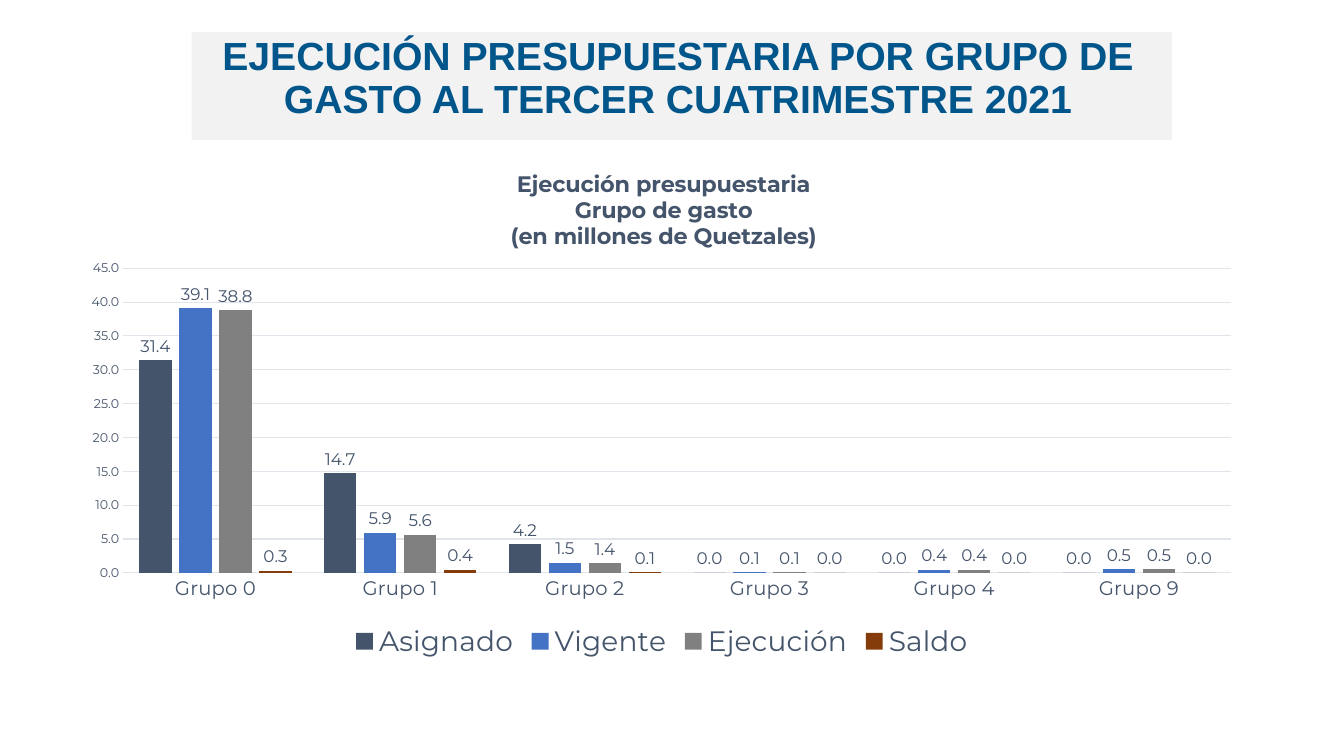
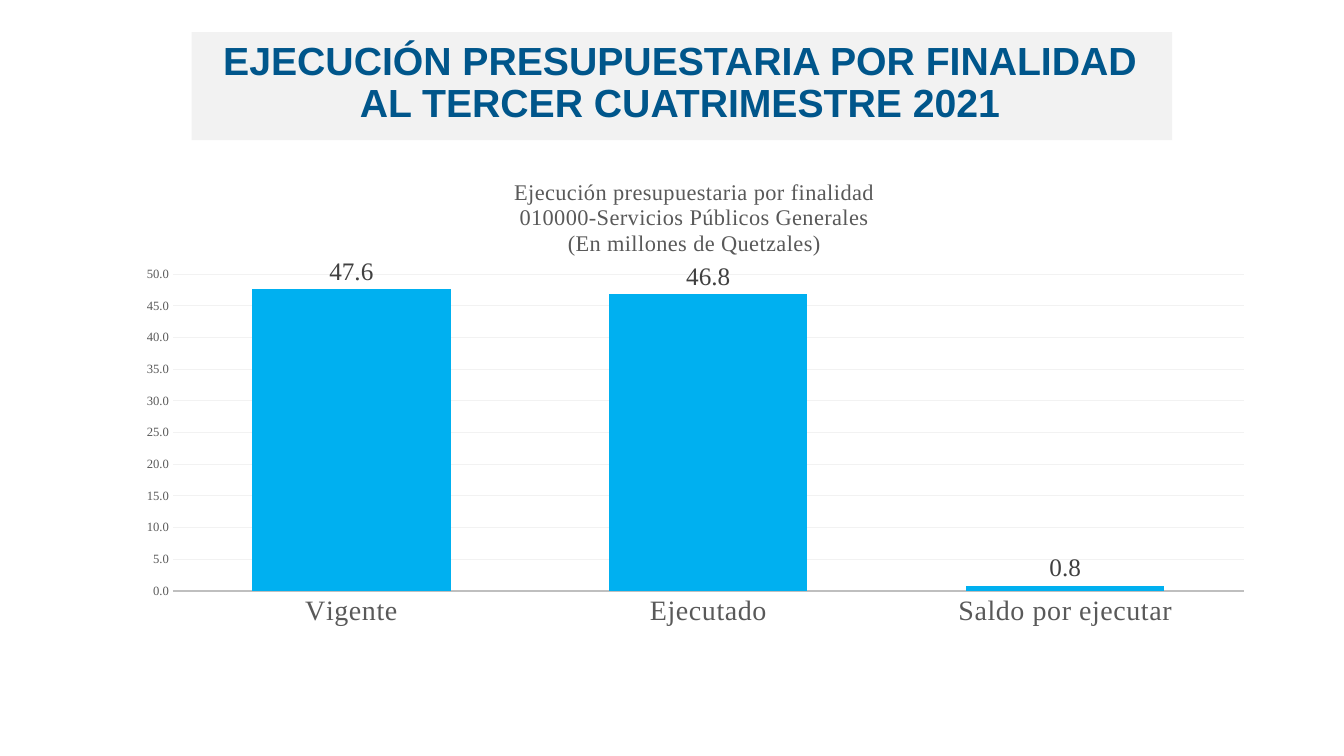
"""Builds two slides on budget execution, each with a title band and a column chart."""
from dataclasses import dataclass

from pptx import Presentation
from pptx.chart.data import CategoryChartData
from pptx.dml.color import RGBColor
from pptx.enum.chart import XL_CHART_TYPE, XL_LABEL_POSITION, XL_LEGEND_POSITION, XL_TICK_MARK
from pptx.enum.shapes import MSO_SHAPE
from pptx.enum.text import MSO_ANCHOR, PP_ALIGN
from pptx.oxml import parse_xml
from pptx.oxml.ns import nsdecls, qn
from pptx.util import Cm, Pt

BAND = RGBColor(0xF2, 0xF2, 0xF2)
TITLE = RGBColor(0x00, 0x56, 0x8B)
SLATE = RGBColor(0x44, 0x54, 0x6A)
BLUE = RGBColor(0x44, 0x72, 0xC4)
GRAY = RGBColor(0x80, 0x80, 0x80)
BROWN = RGBColor(0x84, 0x3C, 0x0B)
SKY = RGBColor(0x00, 0xB0, 0xF0)
MIST = RGBColor(0xE0, 0xE5, 0xEB)
SILVER = RGBColor(0xBF, 0xBF, 0xBF)
DIM = RGBColor(0x59, 0x59, 0x59)
DARK = RGBColor(0x40, 0x40, 0x40)
NUMBER_FORMAT = "0.0"


@dataclass(frozen=True)
class Series:
    name: str
    values: tuple[float, ...]
    color: RGBColor


@dataclass(frozen=True)
class Style:
    font: str
    text: RGBColor
    label: RGBColor
    grid: RGBColor
    axis: RGBColor
    axis_width: float
    title_size: float
    title_bold: bool
    category_size: float
    label_size: float
    title_spacing: int = 0
    axis_spacing: int = 0


@dataclass(frozen=True)
class ChartSlide:
    title: str
    title_left: float
    title_top: float
    box: tuple[float, float, float, float]
    heading: tuple[str, ...]
    heading_at: tuple[float, float]
    plot_at: tuple[float, float, float, float]
    categories: tuple[str, ...]
    series: tuple[Series, ...]
    style: Style
    maximum: float
    gap: int
    overlap: int
    legend: bool


MONTSERRAT = Style("Montserrat", SLATE, SLATE, MIST, MIST, 0.75, 16, True, 14, 12)
TIMES = Style("Times New Roman", DIM, DARK, BAND, SILVER, 1.25, 16, False, 20, 18, 40, 30)

SLIDES = (
    ChartSlide(
        "EJECUCIÓN PRESUPUESTARIA POR GRUPO DE GASTO AL TERCER CUATRIMESTRE 2021",
        4.88, 0.8, (1.73, 3.66, 29.9, 13.08),
        ("Ejecución presupuestaria", "Grupo de gasto", "(en millones de Quetzales)"),
        (0.37, 0.04), (0.046, 0.237, 0.934, 0.587),
        tuple(f"Grupo {n}" for n in (0, 1, 2, 3, 4, 9)),
        (
            Series("Asignado", (31.4, 14.7, 4.2, 0, 0, 0), SLATE),
            Series("Vigente", (39.1, 5.9, 1.5, 0.1, 0.4, 0.5), BLUE),
            Series("Ejecución", (38.8, 5.6, 1.4, 0.1, 0.4, 0.5), GRAY),
            Series("Saldo", (0.3, 0.4, 0.1, 0, 0, 0), BROWN),
        ),
        MONTSERRAT, 45, 100, -24, True,
    ),
    ChartSlide(
        "EJECUCIÓN PRESUPUESTARIA POR FINALIDAD AL TERCER CUATRIMESTRE 2021",
        4.93, 0.91, (3.12, 3.94, 28.8, 12.12),
        ("Ejecución presupuestaria por finalidad", "010000-Servicios Públicos Generales",
         "(En millones de Quetzales)"),
        (0.339, 0.04), (0.043, 0.245, 0.937, 0.659),
        ("Vigente", "Ejecutado", "Saldo por ejecutar"),
        (Series("Series 1", (47.6, 46.8, 0.8), SKY),),
        TIMES, 50, 80, 25, False,
    ),
)


def set_font(font, name: str, size: float, color: RGBColor, bold: bool = False) -> None:
    """Set the face, size, colour and weight of a font."""
    font.name, font.size, font.bold = name, Pt(size), bold
    font.color.rgb = color


def set_layout(parent, position: tuple[float, ...], inner: bool = False) -> None:
    """Place a chart part by fractions of the chart area."""
    for old in parent.findall(qn("c:layout")):
        parent.remove(old)
    target = '<c:layoutTarget val="inner"/>' if inner else ""
    modes = "".join(f'<c:{a}Mode val="edge"/>' for a in "xy")
    sizes = "".join(f'<c:{a} val="{v}"/>' for a, v in zip("xywh", position))
    layout = parse_xml(f'<c:layout {nsdecls("c")}><c:manualLayout>{target}{modes}{sizes}'
                       "</c:manualLayout></c:layout>")
    tx = parent.find(qn("c:tx"))
    if tx is None:
        parent.insert(0, layout)
    else:
        tx.addnext(layout)


def add_title(s, spec: ChartSlide) -> None:
    """Draw the title band and its text."""
    band = s.shapes.add_shape(MSO_SHAPE.RECTANGLE, Cm(4.83), Cm(0.81), Cm(24.71), Cm(2.72))
    band.shadow.inherit = False
    band.fill.solid()
    band.fill.fore_color.rgb = BAND
    band.line.fill.background()
    sp = s.shapes.add_textbox(Cm(spec.title_left), Cm(spec.title_top), Cm(24.41), Cm(2.4))
    tf = sp.text_frame
    tf.word_wrap = True
    tf.vertical_anchor = MSO_ANCHOR.MIDDLE
    p = tf.paragraphs[0]
    p.text = spec.title
    p.alignment = PP_ALIGN.CENTER
    p.line_spacing = 0.9
    set_font(p.font, "Arial", 28, TITLE, True)


def add_heading(chart, spec: ChartSlide) -> None:
    """Write the heading inside the chart."""
    style = spec.style
    tf = chart.chart_title.text_frame
    for i, line in enumerate(spec.heading):
        p = tf.add_paragraph() if i else tf.paragraphs[0]
        p.alignment = PP_ALIGN.CENTER
        r = p.add_run()
        r.text = line
        set_font(p.font, style.font, style.title_size, style.text, style.title_bold)
        r.font.size = Pt(style.title_size)
        r.font._element.set("spc", str(style.title_spacing))
    chart.chart_title.include_in_layout = False
    set_layout(chart._chartSpace.chart.find(qn("c:title")), spec.heading_at)


def format_axes(chart, spec: ChartSlide) -> None:
    """Style the category and value axes."""
    style = spec.style
    for axis, size in ((chart.category_axis, style.category_size), (chart.value_axis, 9)):
        axis.major_tick_mark = axis.minor_tick_mark = XL_TICK_MARK.NONE
        font = axis.tick_labels.font
        set_font(font, style.font, size, style.text)
    chart.category_axis.tick_labels.font._element.set("spc", str(style.axis_spacing))
    line = chart.category_axis.format.line
    line.color.rgb, line.width = style.axis, Pt(style.axis_width)
    values = chart.value_axis
    values.minimum_scale, values.maximum_scale, values.major_unit = 0, spec.maximum, 5
    values.tick_labels.number_format = NUMBER_FORMAT
    values.tick_labels.number_format_is_linked = False
    values.format.line.fill.background()
    grid = values.major_gridlines.format.line
    grid.color.rgb, grid.width = style.grid, Pt(0.75)


def add_column_chart(s, spec: ChartSlide) -> None:
    """Draw the column chart with its labels and legend."""
    style = spec.style
    data = CategoryChartData(number_format=NUMBER_FORMAT)
    data.categories = spec.categories
    for item in spec.series:
        data.add_series(item.name, item.values)
    frame = s.shapes.add_chart(XL_CHART_TYPE.COLUMN_CLUSTERED, *map(Cm, spec.box), data)
    chart = frame.chart
    chart.font.name, chart.font.size = style.font, Pt(10)
    add_heading(chart, spec)
    format_axes(chart, spec)
    plot = chart.plots[0]
    plot.gap_width, plot.overlap, plot.vary_by_categories = spec.gap, spec.overlap, False
    for series, item in zip(plot.series, spec.series):
        series.invert_if_negative = False
        series.format.fill.solid()
        series.format.fill.fore_color.rgb = item.color
        labels = series.data_labels
        labels.show_value = True
        labels.position = XL_LABEL_POSITION.OUTSIDE_END
        labels.number_format, labels.number_format_is_linked = NUMBER_FORMAT, False
        set_font(labels.font, style.font, style.label_size, style.label)
    chart.has_legend = spec.legend
    if spec.legend:
        chart.legend.position = XL_LEGEND_POSITION.BOTTOM
        chart.legend.include_in_layout = False
        set_font(chart.legend.font, style.font, 20, style.text)
    set_layout(chart._chartSpace.chart.plotArea, spec.plot_at, inner=True)


def main() -> None:
    """Build and save the presentation."""
    prs = Presentation()
    prs.slide_width, prs.slide_height = Cm(33.87), Cm(19.05)
    for spec in SLIDES:
        s = prs.slides.add_slide(prs.slide_layouts[6])
        add_title(s, spec)
        add_column_chart(s, spec)
    prs.save("out.pptx")


if __name__ == "__main__":
    main()
